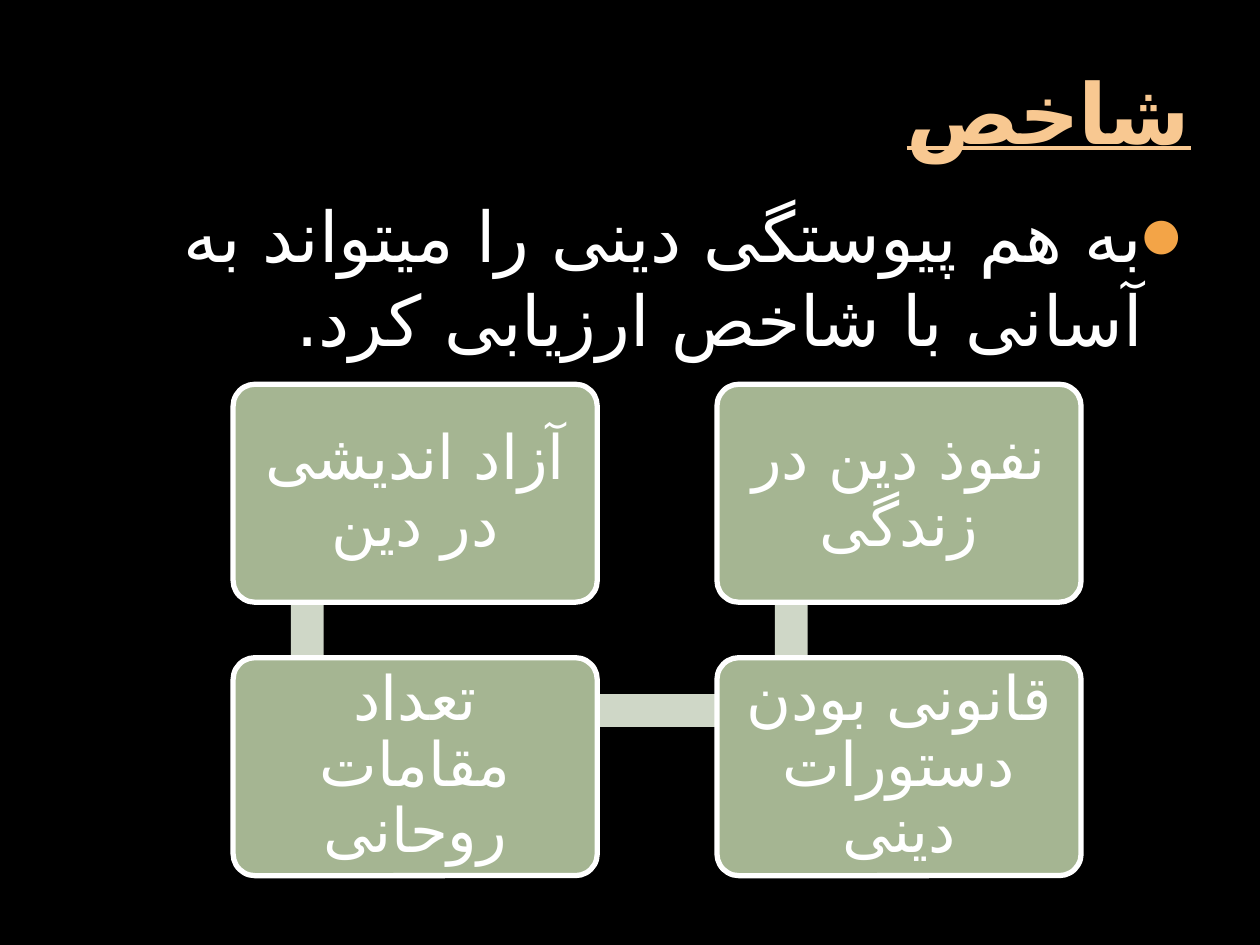
from lxml.etree import SubElement
from pptx import Presentation
from pptx.dml.color import RGBColor
from pptx.enum.shapes import MSO_SHAPE
from pptx.enum.text import MSO_ANCHOR, MSO_AUTO_SIZE, PP_ALIGN
from pptx.oxml.ns import qn
from pptx.util import Inches, Pt

TITLE = "شاخص"
BODY = "به هم پیوستگی دینی را میتواند به آسانی با شاخص ارزیابی کرد."
CARDS = [  # column, row, text
    (0, 0, "آزاد اندیشی در دین"),
    (0, 1, "تعداد مقامات روحانی"),
    (1, 1, "قانونی بودن دستورات دینی"),
    (1, 0, "نفوذ دین در زندگی"),
]
FONT = "TeX Gyre Pagella"
ARABIC_FONT = "DejaVu Sans"
BLACK = RGBColor(0x00, 0x00, 0x00)
WHITE = RGBColor(0xFF, 0xFF, 0xFF)
PEACH = RGBColor(0xF8, 0xC8, 0x91)
ORANGE = RGBColor(0xF3, 0xA4, 0x47)
GREEN = RGBColor(0xA5, 0xB5, 0x92)
PALE = RGBColor(0xCF, 0xD7, 0xC7)

LEFT, TOP = 1.85, 3.05
CARD_W, CARD_H = 2.89, 1.73
STEP_X, STEP_Y = 3.84, 2.17
BAR = 0.26


def write(tf, text, size, color, align):
    """Write one right-to-left paragraph and return it with its run."""
    tf.word_wrap = True
    tf.auto_size = MSO_AUTO_SIZE.NONE
    p = tf.paragraphs[0]
    p.alignment = align
    p._p.get_or_add_pPr().set("rtl", "1")
    r = p.add_run()
    r.text = text
    r.font.size = Pt(size)
    r.font.name = FONT
    r.font.color.rgb = color
    SubElement(r._r.get_or_add_rPr(), qn("a:cs"), typeface=ARABIC_FONT)
    return p, r


def add_bullet(p):
    """Give the paragraph a hanging orange bullet."""
    pPr = p._p.get_or_add_pPr()
    pPr.set("marL", str(Inches(0.3)))
    pPr.set("indent", str(-Inches(0.3)))
    color = SubElement(pPr, qn("a:buClr"))
    SubElement(color, qn("a:srgbClr"), val=str(ORANGE))
    SubElement(pPr, qn("a:buSzPct"), val="63000")
    SubElement(pPr, qn("a:buFont"), typeface=ARABIC_FONT)
    SubElement(pPr, qn("a:buChar"), char="●")


def add_block(slide, kind, box, fill):
    """Add a flat filled shape without a line."""
    sp = slide.shapes.add_shape(kind, *map(Inches, box))
    sp.shadow.inherit = False
    sp.fill.solid()
    sp.fill.fore_color.rgb = fill
    sp.line.fill.background()
    return sp


def add_card(slide, col, row, text):
    """Add a rounded card with centred text at a grid position."""
    box = (LEFT + col * STEP_X, TOP + row * STEP_Y, CARD_W, CARD_H)
    sp = add_block(slide, MSO_SHAPE.ROUNDED_RECTANGLE, box, GREEN)
    sp.adjustments[0] = 0.1
    sp.line.color.rgb = WHITE
    sp.line.width = Pt(3)
    tf = sp.text_frame
    tf.margin_left = tf.margin_right = Inches(0.15)
    tf.margin_top = tf.margin_bottom = Inches(0.15)
    tf.vertical_anchor = MSO_ANCHOR.MIDDLE
    p, _ = write(tf, text, 35, WHITE, PP_ALIGN.CENTER)
    p.line_spacing = 0.9


prs = Presentation()
prs.slide_width, prs.slide_height = Inches(10), Inches(7.5)
slide = prs.slides.add_slide(prs.slide_layouts[5])
slide.background.fill.solid()
slide.background.fill.fore_color.rgb = BLACK

title = slide.shapes.title
title.left, title.top = Inches(0.55), Inches(0)
title.width, title.height = Inches(9), Inches(1.33)
title.text_frame.vertical_anchor = MSO_ANCHOR.BOTTOM
_, r = write(title.text_frame, TITLE, 48, PEACH, PP_ALIGN.RIGHT)
r.font.bold = r.font.underline = True
r._r.get_or_add_rPr().set("spc", "-100")

body = slide.shapes.add_textbox(*map(Inches, (0.47, 1.48, 9, 1.85)))
p, _ = write(body.text_frame, BODY, 40, WHITE, PP_ALIGN.RIGHT)
p.space_before = Pt(6)
add_bullet(p)

bars = [(LEFT + 0.46 + col * STEP_X, 3.48, BAR, 2.15) for col in (0, 1)]
bars.append((2.44, 5.51, 3.83, BAR))
for bar in bars:
    add_block(slide, MSO_SHAPE.RECTANGLE, bar, PALE)
for card in CARDS:
    add_card(slide, *card)

prs.save("out.pptx")
